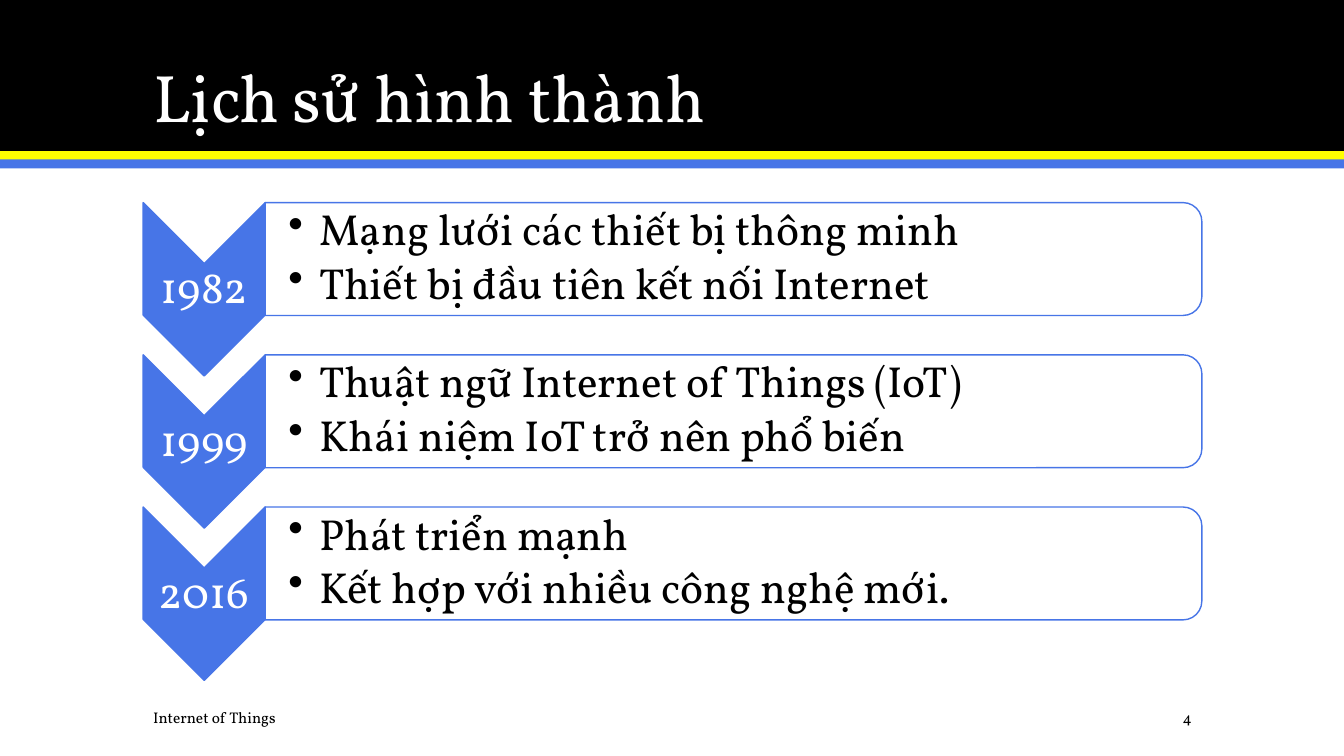
from lxml.etree import SubElement
from pptx import Presentation
from pptx.dml.color import RGBColor
from pptx.enum.shapes import MSO_SHAPE as Shape
from pptx.enum.text import MSO_ANCHOR as Anchor, PP_ALIGN as Align
from pptx.oxml.ns import qn
from pptx.util import Pt

PX = 9144
BLACK = RGBColor(0x00, 0x00, 0x00)
WHITE = RGBColor(0xFF, 0xFF, 0xFF)
YELLOW = RGBColor(0xFF, 0xFF, 0x00)
BLUE = RGBColor(0x47, 0x75, 0xE7)

MILESTONES = [
    ("1982", ["Mạng lưới các thiết bị thông minh", "Thiết bị đầu tiên kết nối Internet"]),
    ("1999", ["Thuật ngữ Internet of Things (IoT)", "Khái niệm IoT trở nên phổ biến"]),
    ("2016", ["Phát triển mạnh", "Kết hợp với nhiều công nghệ mới."]),
]
FIRST_TOP, ROW_PITCH = 201, 151


class TimelineSlide:
    """Draws the elements of a timeline slide in one style, with lengths in px."""

    font_name = "Vollkorn"

    def __init__(self, presentation):
        layout = presentation.slide_layouts[5]
        self.slide = presentation.slides.add_slide(layout)

    def band(self, top, height, color):
        shape = self.slide.shapes.add_shape(Shape.RECTANGLE, 0, top * PX, 1333 * PX, height * PX)
        shape.shadow.inherit = False
        shape.fill.solid()
        shape.fill.fore_color.rgb = color
        shape.line.fill.background()

    def turned_shape(self, kind, left, top, width, height, color):
        shift = (width - height) * PX // 2
        shape = self.slide.shapes.add_shape(
            kind, left * PX + shift, top * PX - shift, height * PX, width * PX)
        shape.rotation = 90
        shape.shadow.inherit = False
        shape.fill.solid()
        shape.fill.fore_color.rgb = color
        shape.line.color.rgb = BLUE
        shape.line.width = Pt(1)
        return shape

    def set_lines(self, frame, lines, size, color, align=Align.LEFT, spacing=None, after=0):
        frame.word_wrap = True
        for index, line in enumerate(lines):
            paragraph = frame.add_paragraph() if index else frame.paragraphs[0]
            paragraph.text = line
            paragraph.alignment = align
            paragraph.line_spacing = spacing
            paragraph.space_before = Pt(0)
            paragraph.space_after = Pt(after)
            paragraph.font.name = self.font_name
            paragraph.font.size = Pt(size)
            paragraph.font.color.rgb = color

    def title(self, text, left, top, width, height):
        title = self.slide.shapes.title
        title.left, title.top = left * PX, top * PX
        title.width, title.height = width * PX, height * PX
        title.text_frame.vertical_anchor = Anchor.BOTTOM
        self.set_lines(title.text_frame, [text], 48, WHITE, spacing=0.9)
        title.element.getparent().append(title.element)

    def text(self, lines, left, top, width, height, size, color, inset=None, **style):
        box = self.slide.shapes.add_textbox(left * PX, top * PX, width * PX, height * PX)
        frame = box.text_frame
        frame.vertical_anchor = Anchor.MIDDLE
        if inset is not None:
            frame.margin_left = inset * PX
            frame.margin_top = frame.margin_right = frame.margin_bottom = 2 * PX
        self.set_lines(frame, lines, size, color, **style)
        return frame

    def bullets(self, lines, left, top, width, height):
        frame = self.text(lines, left, top, width, height, 31, BLACK,
                          inset=24, spacing=0.9, after=5)
        for paragraph in frame.paragraphs:
            properties = paragraph._p.get_or_add_pPr()
            properties.set("marL", str(31 * PX))
            properties.set("indent", str(-31 * PX))
            bullet = SubElement(properties, qn("a:buChar"), char="•")
            properties.find(qn("a:defRPr")).addprevious(bullet)

    def milestone(self, year, lines, top):
        self.turned_shape(Shape.CHEVRON, 142, top, 121, 172, BLUE)
        self.text([year], 142, top + 60, 121, 52, 32, WHITE,
                  inset=2, align=Align.CENTER, spacing=0.9, after=11)
        panel = self.turned_shape(Shape.ROUND_2_SAME_RECTANGLE, 263, top, 929, 112, WHITE)
        color = panel.element.spPr.find(qn("a:solidFill"))[0]
        SubElement(color, qn("a:alpha"), val="90000")
        self.bullets(lines, 262, top + 5, 924, 101)


def main():
    presentation = Presentation()
    presentation.slide_width = 1333 * PX
    presentation.slide_height = 750 * PX
    timeline = TimelineSlide(presentation)
    timeline.band(0, 150, BLACK)
    timeline.band(150, 9, YELLOW)
    timeline.band(158, 9, BLUE)
    timeline.title("Lịch sử hình thành", 142, 28, 1050, 113)
    for row, (year, lines) in enumerate(MILESTONES):
        timeline.milestone(year, lines, FIRST_TOP + row * ROW_PITCH)
    timeline.text(["4"], 1042, 697, 150, 30, 11, BLACK, align=Align.RIGHT)
    timeline.text(["Internet of Things"], 142, 697, 683, 30, 11, BLACK)
    presentation.save("out.pptx")


if __name__ == "__main__":
    main()
